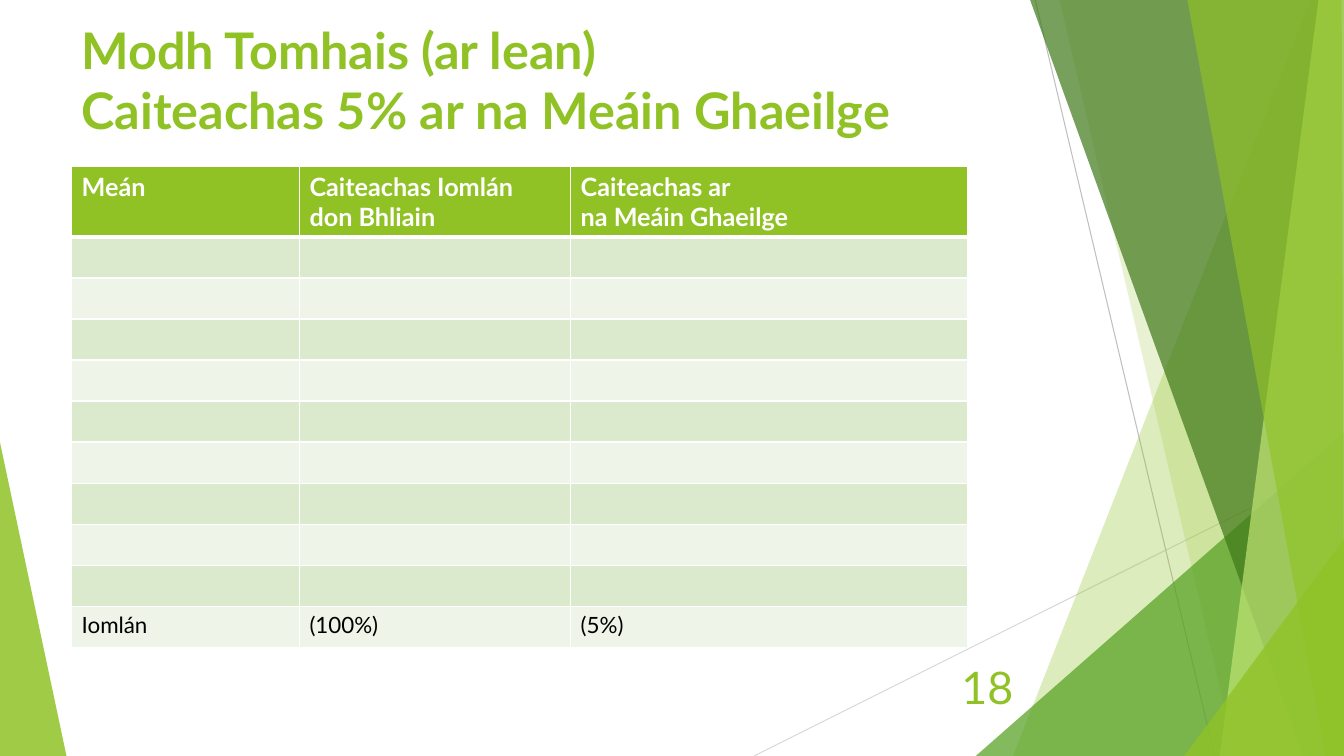
from pptx import Presentation
from pptx.dml.color import RGBColor
from pptx.enum.shapes import MSO_CONNECTOR
from pptx.enum.text import MSO_ANCHOR as Anchor, PP_ALIGN as Align
from pptx.oxml.ns import qn
from pptx.util import Inches, Pt
from lxml.etree import SubElement

FONT = "Lato"
GREEN, WHITE, BLACK = "90C226", "FFFFFF", "000000"
BANDS = ("DBE9CD", "EEF4E8")
WIDTH, HEIGHT = Inches(13.333), Inches(7.5)

# Positions are percentages of the slide's width and height.
LEFT_FACET = ([(0, 58.5), (4.95, 100), (0, 100)], GREEN, 85)
RAYS = [
    ((56.1, 100), (100, 61), "D9D9D9"),
    ((77.03, 0), (90.38, 100), "BFBFBF"),
]
RIGHT_FACETS = [
    ([(97.5, 0), (75.38, 100), (100, 100), (100, 0)], GREEN, 30),
    ([(78.83, 0), (91.95, 100), (100, 100), (100, 0)], GREEN, 20),
    ([(72.6, 100), (100, 57.2), (100, 100)], "54A021", 72),
    ([(76.65, 0), (96.98, 100), (100, 100), (100, 0)], "3F7819", 70),
    ([(98.1, 0), (90.75, 100), (100, 100), (100, 0)], "C0E474", 70),
    ([(88.35, 0), (98.63, 100), (100, 100), (99.83, 0)], GREEN, 65),
    ([(88.13, 100), (100, 71.33), (100, 100)], GREEN, 80),
]
HEADINGS = ["Meán", "Caiteachas Iomlán don Bhliain", "Caiteachas ar\nna Meáin Ghaeilge"]
TOTALS = ["Iomlán", "(100%)", "(5%)"]
EMPTY_ROWS = 9
COLUMN_SHARES = [16.95, 20.18, 29.55]
HEADER_SHARE, ROW_SHARE = 9.2, 5.43


def across(share):
    return round(WIDTH * share / 100)


def down(share):
    return round(HEIGHT * share / 100)


def colour(code):
    return RGBColor.from_string(code)


def style_text(frame, size, code, bold=False, align=Align.LEFT):
    for para in frame.paragraphs:
        para.alignment = align
        for span in para.runs:
            span.font.name = FONT
            span.font.size = Pt(size)
            span.font.bold = bold
            span.font.color.rgb = colour(code)


def add_facet(page, points, code, opacity):
    corners = [(across(x), down(y)) for x, y in points]
    builder = page.shapes.build_freeform(*corners[0])
    builder.add_line_segments(corners[1:], close=True)
    facet = builder.convert_to_shape()
    facet.shadow.inherit = False
    facet.line.fill.background()
    facet.fill.solid()
    facet.fill.fore_color.rgb = colour(code)
    tint = facet.fill._xPr.find(qn("a:solidFill"))[0]
    SubElement(tint, qn("a:alpha"), val=str(opacity * 1000))


def add_ray(page, start, end, code):
    ray = page.shapes.add_connector(
        MSO_CONNECTOR.STRAIGHT,
        across(start[0]), down(start[1]), across(end[0]), down(end[1]),
    )
    ray.line.color.rgb = colour(code)
    ray.line.width = Pt(0.75)
    SubElement(ray._element.spPr, qn("a:effectLst"))


def add_label(page, area, text, size, anchor, **style):
    left, top, width, height = area
    box = page.shapes.add_textbox(across(left), down(top), across(width), down(height))
    frame = box.text_frame
    frame.word_wrap = True
    frame.vertical_anchor = anchor
    frame.text = text
    style_text(frame, size, GREEN, **style)


def set_borders(cell, bottom):
    """Draw white borders, with the bottom width in points."""
    properties = cell._tc.get_or_add_tcPr()
    widths = {"lnL": 1, "lnR": 1, "lnT": 1, "lnB": bottom}
    for index, (side, width) in enumerate(widths.items()):
        border = SubElement(properties, qn(f"a:{side}"), w=str(Pt(width)))
        fill = SubElement(border, qn("a:solidFill"))
        SubElement(fill, qn("a:srgbClr"), val=WHITE)
        properties.insert(index, border)


def add_spending_table(page, left, top):
    rows = [HEADINGS] + [[""] * len(HEADINGS)] * EMPTY_ROWS + [TOTALS]
    heights = [HEADER_SHARE] + [ROW_SHARE] * (len(rows) - 1)
    table = page.shapes.add_table(
        len(rows), len(HEADINGS), across(left), down(top),
        across(sum(COLUMN_SHARES)), down(sum(heights)),
    ).table
    for column, share in zip(table.columns, COLUMN_SHARES):
        column.width = across(share)
    for number, (texts, share) in enumerate(zip(rows, heights)):
        table.rows[number].height = down(share)
        header = number == 0
        for cell, text in zip(table.rows[number].cells, texts):
            cell.text_frame.text = text
            style_text(cell.text_frame, 18 if header else 16,
                       WHITE if header else BLACK, bold=header)
            cell.fill.solid()
            cell.fill.fore_color.rgb = colour(GREEN if header else BANDS[(number - 1) % 2])
            set_borders(cell, bottom=3 if header else 1)


def main():
    deck = Presentation()
    deck.slide_width, deck.slide_height = WIDTH, HEIGHT
    page = deck.slides.add_slide(deck.slide_layouts[6])
    add_facet(page, *LEFT_FACET)
    for ray in RAYS:
        add_ray(page, *ray)
    for facet in RIGHT_FACETS:
        add_facet(page, *facet)
    add_label(page, (5.33, 1.87, 84.9, 9.33),
              "Modh Tomhais (ar lean)\vCaiteachas 5% ar na Meáin Ghaeilge",
              36, Anchor.TOP, bold=True)
    add_label(page, (70.5, 88.13, 5.63, 5.33), "18", 32, Anchor.MIDDLE, align=Align.RIGHT)
    add_spending_table(page, 5.33, 22)
    deck.save("out.pptx")


if __name__ == "__main__":
    main()
